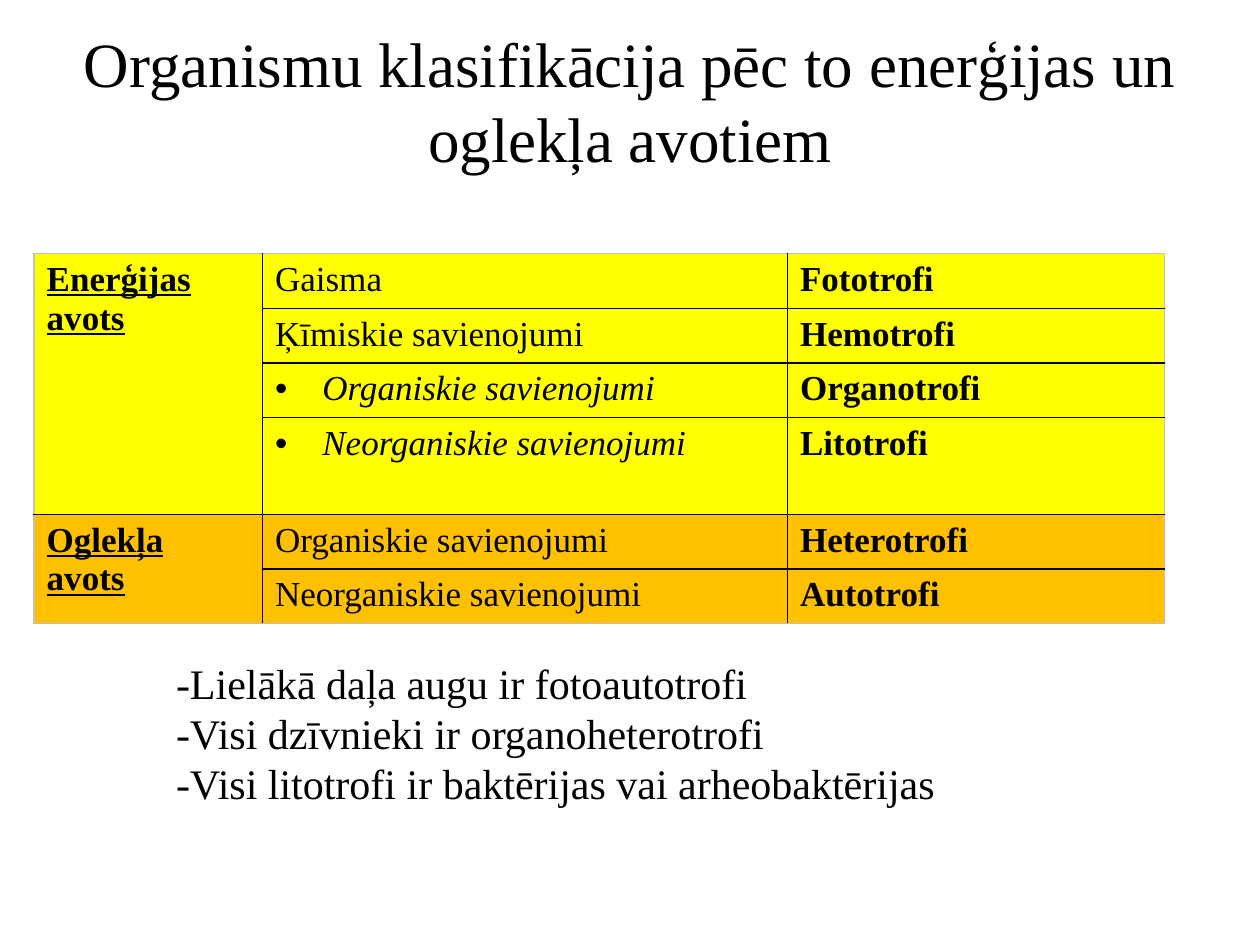
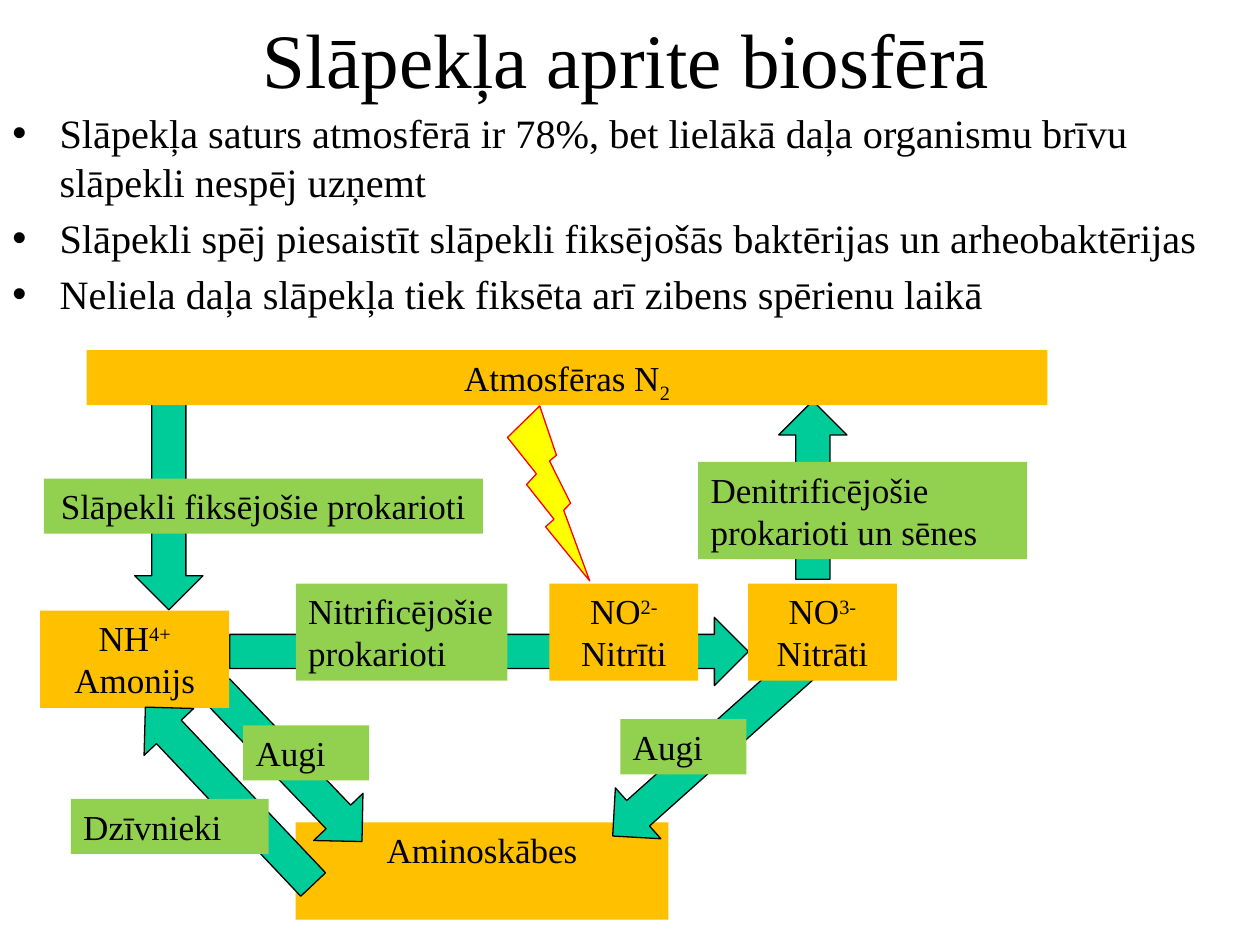
from lxml import etree
from pptx import Presentation
from pptx import util as u
from pptx.dml import color as clr
from pptx.enum import shapes, text
from pptx.oxml import ns

BLACK, GREY, RED = "000000", "C0C0C0", "FF0000"
YELLOW, ORANGE, GREEN, TEAL = "FFFF00", "FFC000", "92D050", "00CC99"
SHAPE = shapes.MSO_SHAPE
CENTER = text.PP_ALIGN.CENTER
LINE, TWO_LINES = 31.5, 55.5


def rgb(value):
    return clr.RGBColor.from_string(value)


def pts(*values):
    return [u.Pt(v) for v in values]


class Deck:
    """Holds the presentation style and the current slide."""

    font = "Times New Roman"

    def __init__(self, width, height):
        self.prs = Presentation()
        self.prs.slide_width, self.prs.slide_height = pts(width, height)

    def new_slide(self):
        self.s = self.prs.slides.add_slide(self.prs.slide_layouts[6])

    def add_text(self, tf, paragraphs, size, align=None, bullet=False, before=0, **fmt):
        tf.word_wrap = True
        for i, runs in enumerate(paragraphs):
            p = tf.add_paragraph() if i else tf.paragraphs[0]
            p.alignment = align or text.PP_ALIGN.LEFT
            p.space_before = u.Pt(before)
            if bullet:
                self.bullet(p)
            for content, baseline in [(runs, 0)] if isinstance(runs, str) else runs:
                r = p.add_run()
                r.text = content
                for name, value in {"name": self.font, "size": u.Pt(size), **fmt}.items():
                    setattr(r.font, name, value)
                r.font.color.rgb = rgb(BLACK)
                if baseline:
                    r._r.get_or_add_rPr().set("baseline", str(baseline * 1000))

    def bullet(self, p):
        pPr = p._p.get_or_add_pPr()
        pPr.set("marL", str(u.Pt(27)))
        pPr.set("indent", str(-u.Pt(27)))
        etree.SubElement(pPr, ns.qn("a:buFont"), typeface="Arial")
        etree.SubElement(pPr, ns.qn("a:buChar"), char="•")

    def textbox(self, box, paragraphs, size, anchor=text.MSO_ANCHOR.TOP, **fmt):
        tf = self.s.shapes.add_textbox(*pts(*box)).text_frame
        tf.vertical_anchor = anchor
        self.add_text(tf, paragraphs, size, **fmt)

    def title(self, box, content, size):
        self.textbox(box, [content], size, text.MSO_ANCHOR.MIDDLE, align=CENTER)

    def shape(self, kind, box, fill, line=None, rotation=0):
        sp = self.s.shapes.add_shape(kind, *pts(*box))
        sp.shadow.inherit = False
        sp.rotation = rotation
        sp.fill.solid()
        sp.fill.fore_color.rgb = rgb(fill)
        if line:
            sp.line.color.rgb = rgb(line)
            sp.line.width = u.Pt(0.75)
        else:
            sp.line.fill.background()
        return sp

    def label(self, box, fill, paragraphs, align=None):
        tf = self.shape(SHAPE.RECTANGLE, box, fill).text_frame
        tf.vertical_anchor = text.MSO_ANCHOR.TOP
        self.add_text(tf, paragraphs, 20, align)

    def arrow(self, left, top, length, rotation=0):
        self.shape(SHAPE.DOWN_ARROW, (left, top, 39, length), TEAL, BLACK, rotation)

    def border(self, cell, side, color):
        ln = etree.SubElement(cell._tc.get_or_add_tcPr(), ns.qn(f"a:ln{side}"), w=str(u.Pt(1)))
        fill = etree.SubElement(ln, ns.qn("a:solidFill"))
        etree.SubElement(fill, ns.qn("a:srgbClr"), val=color)

    def table(self, left, top, widths, heights, groups):
        rows, cols = len(heights), len(widths)
        box = pts(left, top, sum(widths), sum(heights))
        tbl = self.s.shapes.add_table(rows, cols, *box).table
        tbl.first_row = tbl.horz_banding = False
        for col, width in zip(tbl.columns, widths):
            col.width = u.Pt(width)
        for row, height in zip(tbl.rows, heights):
            row.height = u.Pt(height)
        r = 0
        for heading, fill, entries in groups:
            tbl.cell(r, 0).merge(tbl.cell(r + len(entries) - 1, 0))
            self.add_text(tbl.cell(r, 0).text_frame, [heading], 20, bold=True, underline=True)
            for source, name, sub in entries:
                self.add_text(tbl.cell(r, 1).text_frame, [source], 20, bullet=sub, italic=sub, bold=False)
                self.add_text(tbl.cell(r, 2).text_frame, [name], 20, bold=True)
                for c in range(cols):
                    self.style_cell(tbl.cell(r, c), r, c, rows, cols, fill)
                r += 1

    def style_cell(self, cell, r, c, rows, cols, fill):
        bottom = r + (cell.span_height if cell.is_merge_origin else 1)
        outer = {"L": c == 0, "R": c == cols - 1, "T": r == 0, "B": bottom == rows}
        for side, is_outer in outer.items():
            if side in "LR" or not cell.is_spanned:
                self.border(cell, side, GREY if is_outer else BLACK)
        cell.fill.solid()
        cell.fill.fore_color.rgb = rgb(fill)


def classification(deck):
    deck.new_slide()
    deck.title((27, 9.5, 666, 95), "Organismu klasifikācija pēc to enerģijas un oglekļa avotiem", 36)
    deck.table(19.5, 145, (130.5, 300, 215.5), (31.2, 31.2, 31.2, 51.5, 31.2, 31.2), [
        ("Enerģijas avots", YELLOW, [
            ("Gaisma", "Fototrofi", False),
            ("Ķīmiskie savienojumi", "Hemotrofi", False),
            ("Organiskie savienojumi", "Organotrofi", True),
            ("Neorganiskie savienojumi", "Litotrofi", True)]),
        ("Oglekļa avots", ORANGE, [
            ("Organiskie savienojumi", "Heterotrofi", False),
            ("Neorganiskie savienojumi", "Autotrofi", False)]),
    ])
    deck.textbox((93.5, 372, 527, 94.5), [
        "-Lielākā daļa augu ir fotoautotrofi",
        "-Visi dzīvnieki ir organoheterotrofi",
        "-Visi litotrofi ir baktērijas vai arheobaktērijas"], 24)


def nitrogen_cycle(deck):
    deck.new_slide()
    deck.arrow(445, 229, 102, 180)
    deck.label((169, 470, 213, TWO_LINES), ORANGE, ["Aminoskābes"], CENTER)
    for arrow in [(386, 354, 148.5, 48.2), (260, 224, 296.5, 270),
                  (146, 378, 119.5, 316.2), (77, 229, 119.5)]:
        deck.arrow(*arrow)
    deck.title((52, -12, 612, 90), "Slāpekļa aprite biosfērā", 44)
    deck.textbox((0, 58.5, 711.5, 152.5), [
        "Slāpekļa saturs atmosfērā ir 78%, bet lielākā daļa organismu brīvu slāpekli nespēj uzņemt",
        "Slāpekli spēj piesaistīt slāpekli fiksējošās baktērijas un arheobaktērijas",
        "Neliela daļa slāpekļa tiek fiksēta arī zibens spērienu laikā"],
        23, bullet=True, before=4.6)
    deck.label((49.5, 200, 549, LINE), ORANGE, [[("Atmosfēras N", 0), ("2", -25)]], CENTER)
    for left, top, width, formula, charge, name in [
            (314, 333.5, 85, "NO", "2-", "Nitrīti"),
            (427.5, 333.5, 85, "NO", "3-", "Nitrāti"),
            (23, 349, 108, "NH", "4+", "Amonijs")]:
        deck.label((left, top, width, TWO_LINES), ORANGE,
                   [[(formula, 0), (charge, 30)], name], CENTER)
    deck.label((25, 273.5, 251, LINE), GREEN, ["Slāpekli fiksējošie prokarioti"], CENTER)
    for left, top in [(139, 414.5), (354.5, 411)]:
        deck.label((left, top, 72, LINE), GREEN, ["Augi"])
    deck.label((169, 333.5, 121, TWO_LINES), GREEN, ["Nitrificējošie prokarioti"])
    deck.arrow(111.5, 385, 139.5, 136.6)
    deck.label((40.5, 456.5, 113, LINE), GREEN, ["Dzīvnieki"])
    deck.label((399, 264, 188, TWO_LINES), GREEN, ["Denitrificējošie prokarioti un sēnes"])
    deck.shape(SHAPE.LIGHTNING_BOLT, (290, 232, 47, 100), YELLOW, RED)


def main():
    deck = Deck(720, 540)
    classification(deck)
    nitrogen_cycle(deck)
    deck.prs.save("out.pptx")


if __name__ == "__main__":
    main()
